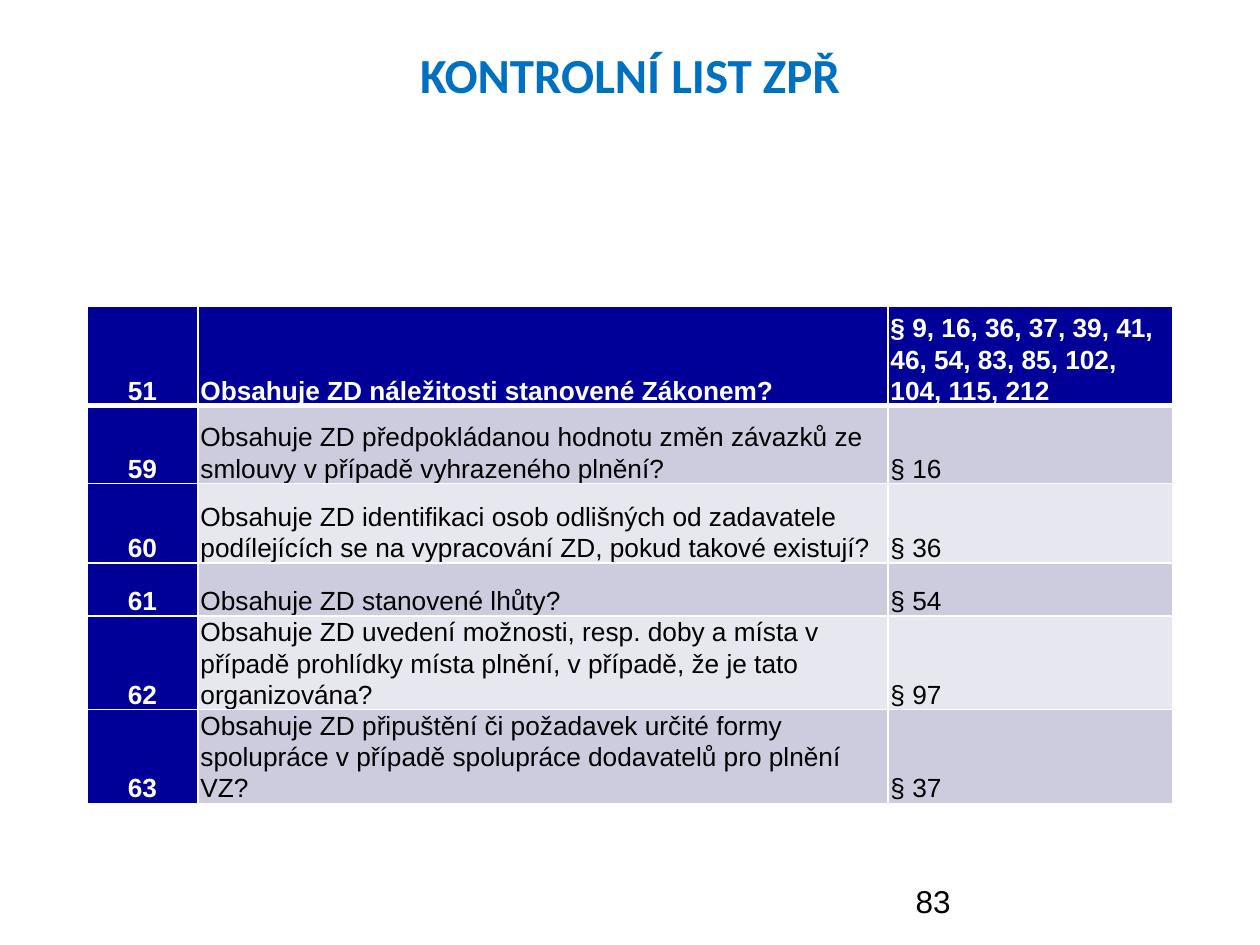
from lxml import etree
from pptx import Presentation
from pptx.dml.color import RGBColor
from pptx.enum.text import MSO_ANCHOR, PP_ALIGN
from pptx.oxml.ns import qn
from pptx.util import Cm, Pt

LEFT, CENTER = PP_ALIGN.LEFT, PP_ALIGN.CENTER
TOP, BOTTOM = MSO_ANCHOR.TOP, MSO_ANCHOR.BOTTOM
TITLE_ONLY = 5

COLORS = {
    "title": "0070C0",
    "header": "000099",
    "odd_row": "CCCCDE",
    "even_row": "E7E7EF",
    "white": "FFFFFF",
    "black": "000000",
}

CHECKLIST = [
    ("51", "Obsahuje ZD náležitosti stanovené Zákonem?",
     "§ 9, 16, 36, 37, 39, 41, 46, 54, 83, 85, 102, 104, 115, 212"),
    ("59", "Obsahuje ZD předpokládanou hodnotu změn závazků ze smlouvy "
     "v případě vyhrazeného plnění?", "§ 16"),
    ("60", "Obsahuje ZD identifikaci osob odlišných od zadavatele "
     "podílejících se na vypracování ZD, pokud takové existují?", "§ 36"),
    ("61", "Obsahuje ZD stanovené lhůty?", "§ 54"),
    ("62", "Obsahuje ZD uvedení možnosti, resp. doby a místa v případě "
     "prohlídky místa plnění, v případě, že je tato organizována?", "§ 97"),
    ("63", "Obsahuje ZD připuštění či požadavek určité formy spolupráce "
     "v případě spolupráce dodavatelů pro plnění VZ?", "§ 37"),
]
COLUMN_WIDTHS = [2.24, 13.91, 5.74]
ROW_HEIGHTS = [2.01, 1.57, 1.6, 1.07, 1.55, 1.68]


class SlideBuilder:
    """Holds the style and the current slide."""

    def __init__(self, slide, font="Arial"):
        self.slide = slide
        self.font = font

    def add_run(self, paragraph, text, size, color, bold=False, align=LEFT, font=None):
        paragraph.alignment = align
        run = paragraph.add_run()
        run.text = text
        run.font.name = font or self.font
        run.font.size = Pt(size)
        run.font.bold = bold
        run.font.color.rgb = RGBColor.from_string(COLORS[color])

    def title(self, text, left, top, width, height):
        shape = self.slide.shapes.title
        shape.left, shape.top = Cm(left), Cm(top)
        shape.width, shape.height = Cm(width), Cm(height)
        shape.text_frame.vertical_anchor = TOP
        self.add_run(shape.text_frame.paragraphs[0], text, 28, "title",
                     bold=True, align=CENTER, font="Calibri")

    def text(self, text, left, top, width, height, size):
        shape = self.slide.shapes.add_textbox(Cm(left), Cm(top), Cm(width), Cm(height))
        shape.text_frame.word_wrap = True
        self.add_run(shape.text_frame.paragraphs[0], text, size, "black")

    def border(self, cell, side, points):
        properties = cell._tc.get_or_add_tcPr()
        line = etree.SubElement(properties, qn(f"a:ln{side}"), w=str(Pt(points)))
        fill = etree.SubElement(line, qn("a:solidFill"))
        etree.SubElement(fill, qn("a:srgbClr"), val=COLORS["white"])

    def cell(self, cell, text, row, column):
        is_header = row == 0 or column == 0
        # Borders come before the fill; the rule under the first row is thicker
        thick_sides = {0: "B", 1: "T"}.get(row, "")
        for side in "LRTB":
            self.border(cell, side, 3 if side in thick_sides else 1)
        band = "odd_row" if row % 2 else "even_row"
        cell.fill.solid()
        cell.fill.fore_color.rgb = RGBColor.from_string(
            COLORS["header" if is_header else band])

        cell.vertical_anchor = BOTTOM
        cell.margin_left = cell.margin_right = Cm(0.05)
        cell.margin_top = cell.margin_bottom = 0
        paragraph = cell.text_frame.paragraphs[0]
        paragraph.line_spacing = 1.07
        self.add_run(paragraph, text, 15, "white" if is_header else "black",
                     bold=is_header, align=LEFT if column else CENTER)

    def table(self, rows, left, top, widths, heights):
        frame = self.slide.shapes.add_table(
            len(rows), len(widths), Cm(left), Cm(top),
            Cm(sum(widths)), Cm(sum(heights)))
        table = frame.table
        table.first_col = True
        for column, width in zip(table.columns, widths):
            column.width = Cm(width)
        for table_row, height in zip(table.rows, heights):
            table_row.height = Cm(height)
        for row, values in enumerate(rows):
            for column, value in enumerate(values):
                self.cell(table.cell(row, column), value, row, column)


def main():
    presentation = Presentation()
    presentation.slide_width, presentation.slide_height = Cm(25.4), Cm(19.05)
    slide = presentation.slides.add_slide(presentation.slide_layouts[TITLE_ONLY])
    builder = SlideBuilder(slide)

    # Title
    builder.title("KONTROLNÍ LIST ZPŘ", 1.27, 0.76, 22.86, 3.18)

    # Checklist
    builder.table(CHECKLIST, 1.75, 6.17, COLUMN_WIDTHS, ROW_HEIGHTS)

    # Page number
    builder.text("83", 18.21, 17.65, 5.92, 1.02, 18)

    presentation.save("out.pptx")


if __name__ == "__main__":
    main()
